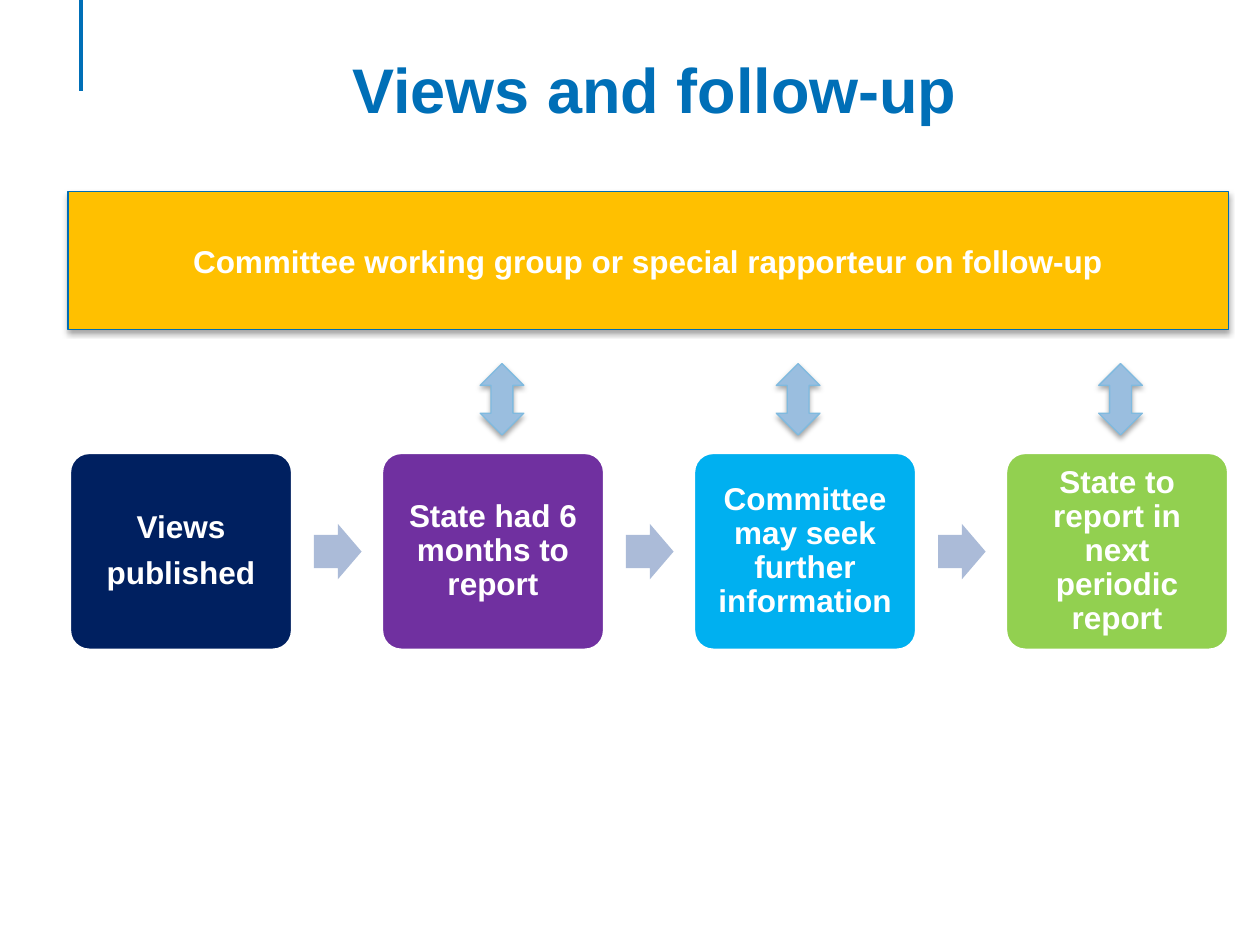
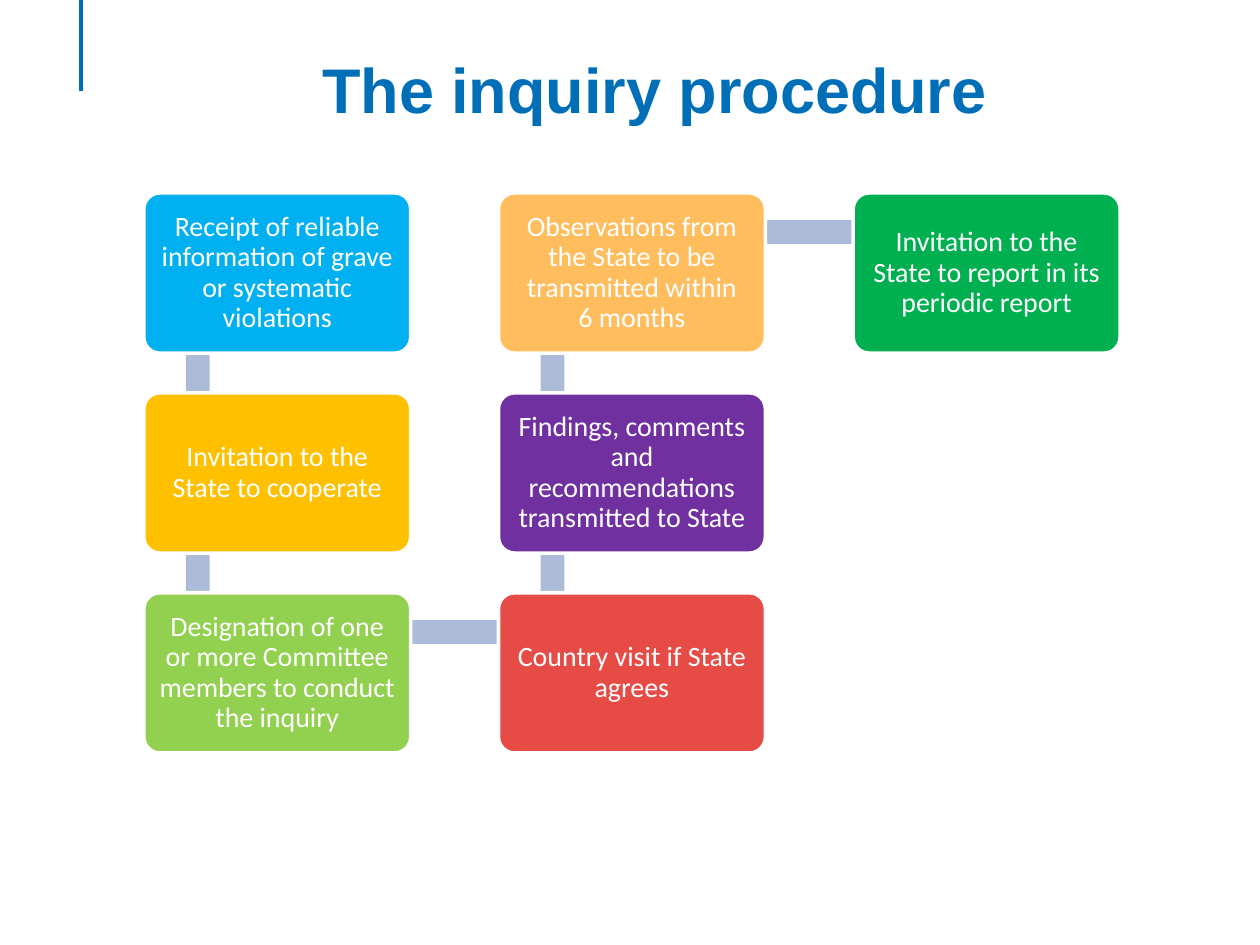
from dataclasses import dataclass
from itertools import pairwise
from typing import Optional

import lxml.etree
import pptx
import pptx.dml.color
import pptx.enum.shapes
import pptx.enum.text
import pptx.oxml
import pptx.oxml.ns
import pptx.util

Cm = pptx.util.Cm
Pt = pptx.util.Pt
SHAPE = pptx.enum.shapes.MSO_SHAPE
ANCHOR = pptx.enum.text.MSO_ANCHOR

TITLE_BLUE = "006FB7"
WHITE = "FFFFFF"
LINK_GREY = "ABBBD8"
AMBER = "FFC000"
PURPLE = "7030A0"
SKY = "00B0F0"
LIME = "92D050"
CARD_INSET = 0.18


@dataclass(frozen=True)
class Box:
    left: float
    top: float
    width: float
    height: float


@dataclass(frozen=True)
class TextStyle:
    font: str
    size: float
    bold: bool = False
    color: str = WHITE
    line_spacing: Optional[float] = None
    paragraph_gap: float = 0


@dataclass(frozen=True)
class Stage:
    text: str
    fill: str


@dataclass(frozen=True)
class Step:
    column: int
    row: int
    text: str
    fill: str


TITLE_STYLE = TextStyle("Arial", 36, True, TITLE_BLUE)
BANNER_STYLE = TextStyle("Arial", 18, True)
STAGE_STYLE = TextStyle("Arial", 18, True, line_spacing=0.9, paragraph_gap=7)
STEP_STYLE = TextStyle("Calibri", 16, line_spacing=0.9)

STAGES = [
    Stage("Views\npublished", "002060"),
    Stage("State had 6 months to report", PURPLE),
    Stage("Committee may seek further information", SKY),
    Stage("State to report in next periodic report", LIME),
]
EXCHANGE_LEFTS = [9.68, 15.65, 22.15]

STEPS = [
    Step(0, 0, "Receipt of reliable information of grave or systematic violations", SKY),
    Step(0, 1, "Invitation to the State to cooperate", AMBER),
    Step(0, 2, "Designation of one or more Committee members to conduct the inquiry", LIME),
    Step(1, 2, "Country visit if State agrees", "E64B46"),
    Step(1, 1, "Findings, comments and recommendations transmitted to State", PURPLE),
    Step(1, 0, "Observations from the State to be transmitted within\v6 months", "FFBD5E"),
    Step(2, 0, "Invitation to the State to report in its periodic report", "00B050"),
]


def rgb(color: str) -> pptx.dml.color.RGBColor:
    return pptx.dml.color.RGBColor.from_string(color)


def lengths(box: Box) -> list[pptx.util.Length]:
    return [Cm(value) for value in (box.left, box.top, box.width, box.height)]


def write_text(shape, text: str, style: TextStyle, anchor, inset: Optional[float] = None) -> None:
    frame = shape.text_frame
    frame.word_wrap = True
    frame.vertical_anchor = anchor
    if inset is not None:
        frame.margin_left = frame.margin_right = Cm(inset)
        frame.margin_top = frame.margin_bottom = Cm(inset)
    for index, line in enumerate(text.split("\n")):
        paragraph = frame.add_paragraph() if index else frame.paragraphs[0]
        paragraph.alignment = pptx.enum.text.PP_ALIGN.CENTER
        if style.line_spacing:
            paragraph.line_spacing = style.line_spacing
        if index:
            paragraph.space_before = Pt(style.paragraph_gap)
        for part_index, part in enumerate(line.split("\v")):
            if part_index:
                paragraph.add_line_break()
            run = paragraph.add_run()
            run.text = part
            run.font.name = style.font
            run.font.size = Pt(style.size)
            run.font.bold = style.bold
            run.font.color.rgb = rgb(style.color)


def add_block(slide, kind, box: Box, fill: str, line: Optional[str] = None, line_width: float = 0.75):
    shape = slide.shapes.add_shape(kind, *lengths(box))
    shape.shadow.inherit = False
    shape.fill.solid()
    shape.fill.fore_color.rgb = rgb(fill)
    if line:
        shape.line.color.rgb = rgb(line)
        shape.line.width = Pt(line_width)
    else:
        shape.line.fill.background()
    return shape


def add_shadow(shape) -> None:
    effects = shape._element.spPr.find(pptx.oxml.ns.qn("a:effectLst"))
    shadow = lxml.etree.SubElement(
        effects, pptx.oxml.ns.qn("a:outerShdw"),
        blurRad=str(Pt(3.1)), dist=str(Pt(1.8)), dir="5400000", rotWithShape="0",
    )
    color = lxml.etree.SubElement(shadow, pptx.oxml.ns.qn("a:srgbClr"), val="000000")
    lxml.etree.SubElement(color, pptx.oxml.ns.qn("a:alpha"), val="35000")


def add_card(slide, box: Box, text: str, fill: str, style: TextStyle) -> None:
    card = add_block(slide, SHAPE.ROUNDED_RECTANGLE, box, fill, WHITE, 2)
    card.adjustments[0] = 0.1
    write_text(card, text, style, ANCHOR.MIDDLE, CARD_INSET)


def add_titled_slide(presentation, title: str):
    slide = presentation.slides.add_slide(presentation.slide_layouts[6])
    accent = slide.shapes.add_connector(
        pptx.enum.shapes.MSO_CONNECTOR.STRAIGHT, Cm(1.63), Cm(0), Cm(1.63), Cm(1.83)
    )
    accent.line.color.rgb = rgb(TITLE_BLUE)
    accent.line.width = Pt(2)
    lxml.etree.SubElement(accent._element.spPr, pptx.oxml.ns.qn("a:effectLst"))
    title_box = slide.shapes.add_textbox(*lengths(Box(2.06, 0.76, 22.28, 3.02)))
    write_text(title_box, title, TITLE_STYLE, ANCHOR.TOP, 0.25)
    return slide


def build_follow_up(presentation) -> None:
    slide = add_titled_slide(presentation, "Views and follow-up")
    first = Box(1.4, 9.12, 4.5, 3.99)
    pitch = 6.29
    for index, stage in enumerate(STAGES):
        left = first.left + index * pitch
        add_card(slide, Box(left, first.top, first.width, first.height),
                 stage.text, stage.fill, STAGE_STYLE)
        if index < len(STAGES) - 1:
            arrow = add_block(slide, SHAPE.RIGHT_ARROW, Box(left + 4.93, 10.56, 0.96, 1.12), LINK_GREY)
            arrow.adjustments[0] = 0.6
            arrow.adjustments[1] = 0.5
    banner = add_block(slide, SHAPE.RECTANGLE, Box(1.37, 3.86, 23.39, 2.79), AMBER, "006DB3")
    add_shadow(banner)
    write_text(banner, "Committee working group or special rapporteur on follow-up",
               BANNER_STYLE, ANCHOR.MIDDLE)
    for left in EXCHANGE_LEFTS:
        exchange = add_block(slide, SHAPE.UP_DOWN_ARROW, Box(left, 7.33, 0.88, 1.44), "9ABEDF", "7FBADF")
        add_shadow(exchange)


def build_inquiry(presentation) -> None:
    slide = add_titled_slide(presentation, "The inquiry procedure")
    first = Box(2.9, 3.89, 5.38, 3.23)
    column_pitch, row_pitch, bar = 7.15, 4.03, 0.48

    def card_box(column: int, row: int) -> Box:
        return Box(first.left + column * column_pitch, first.top + row * row_pitch,
                   first.width, first.height)

    for step, following in pairwise(STEPS):
        start = card_box(step.column, min(step.row, following.row))
        if step.column == following.column:
            link = Box(start.left + 0.85, start.top + 0.8, bar, row_pitch)
        else:
            link = Box(start.left + 1.11, start.top + 0.55, column_pitch, bar)
        add_block(slide, SHAPE.RECTANGLE, link, LINK_GREY)
    for step in STEPS:
        add_card(slide, card_box(step.column, step.row), step.text, step.fill, STEP_STYLE)


def main() -> None:
    presentation = pptx.Presentation()
    presentation.slide_width = Cm(25.4)
    presentation.slide_height = Cm(19.05)
    build_follow_up(presentation)
    build_inquiry(presentation)
    presentation.save("out.pptx")


if __name__ == "__main__":
    main()
